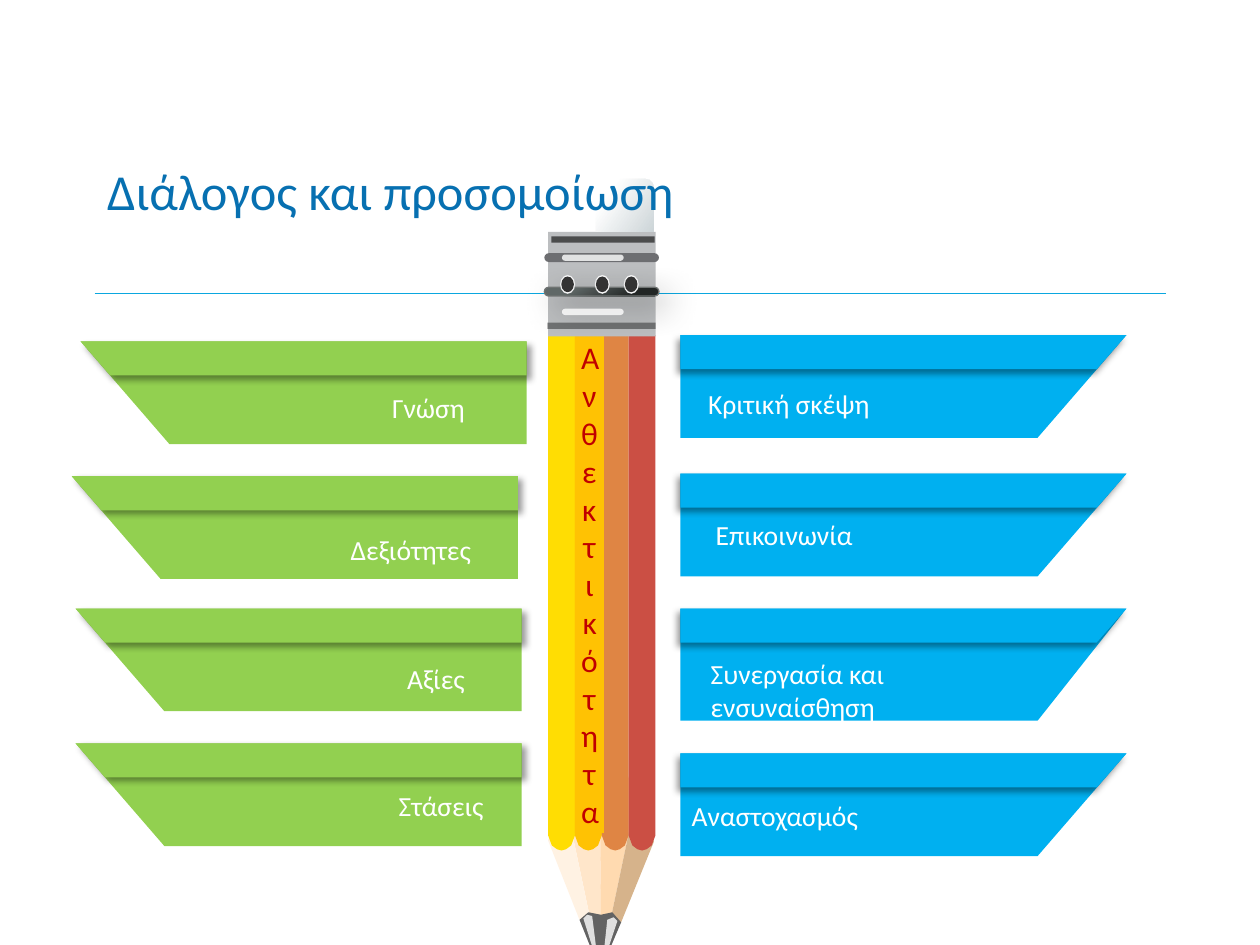
import pptx
import pptx.dml.color
import pptx.enum.shapes
import pptx.enum.text
import pptx.oxml
import pptx.oxml.ns
import pptx.util

SHAPE = pptx.enum.shapes.MSO_SHAPE
ALIGN = pptx.enum.text.PP_ALIGN
ANCHOR = pptx.enum.text.MSO_ANCHOR
QN = pptx.oxml.ns.qn
WIDTH, HEIGHT = pptx.util.Inches(10), pptx.util.Inches(7.5)
COL, ROW = WIDTH / 100, HEIGHT / 75
GREEN, BLUE, WHITE = "92D050", "00B0F0", "FFFFFF"

FACETS = [
    ("FFE6CA", [(4.2, 58.6), (4.1, 47.5), (2, 47.5), (1.3, 49.2), (3.3, 58.7)]),
    ("FFDAB0", [(5, 58.8), (7, 49.3), (6.3, 47.5), (4.1, 47.5), (4.2, 58.6)]),
    ("D6B38B", [(5.8, 59.2), (8.4, 52.8), (7, 49.3), (5, 58.8)]),
    ("FFF2E3", [(1.3, 49.2), (0, 52.7), (2.5, 59), (3.3, 58.7)]),
    ("636363", [(2.5, 59), (3.9, 62.5), (4.2, 62.6), (4.4, 62.5),
                (5.8, 59.2), (5.1, 58.4), (4.2, 58.6), (3.2, 58.4)]),
]
GLINTS = [
    [(5.5, 59.1), (4.3, 62.7), (4.7, 59), (5.2, 58.8)],
    [(2.8, 58.9), (4, 62.7), (3.5, 58.7), (3.1, 58.6)],
]
STRIP_END = [(0, 52.3), (0.14, 53.1), (0.33, 53.4), (0.5, 53.5),
             (0.67, 53.4), (0.86, 53.1), (1, 52.3)]


def rgb(value):
    """Return the colour for a hex string."""
    return pptx.dml.color.RGBColor.from_string(value)


def emu(x, y, w, h):
    """Turn a box in grid cells into slide lengths."""
    return round(x * COL), round(y * ROW), round(w * COL), round(h * ROW)


def paint(sp, color, opacity=100):
    """Give a shape a flat fill with no line and no shadow."""
    sp.shadow.inherit = False
    sp.line.fill.background()
    sp.fill.solid()
    sp.fill.fore_color.rgb = rgb(color)
    if opacity < 100:
        clr = next(sp._element.spPr.iter(QN("a:srgbClr")))
        alpha = pptx.oxml.parse_xml(
            f'<a:alpha {pptx.oxml.ns.nsdecls("a")} val="{opacity * 1000}"/>')
        clr.append(alpha)
    return sp


def shade(sp, colors, positions, angle):
    """Fill a shape with a two-colour gradient."""
    sp.fill.gradient()
    sp.fill.gradient_angle = 360 - angle
    for stop, color, position in zip(sp.fill.gradient_stops, colors, positions):
        stop.color.rgb = rgb(color)
        stop.position = position


def cast_shadow(sp, blur, distance, angle):
    """Add a soft black outer shadow."""
    pt = pptx.util.Pt
    shadow = pptx.oxml.parse_xml(
        f'<a:outerShdw {pptx.oxml.ns.nsdecls("a")} blurRad="{pt(blur)}" dist="{pt(distance)}" '
        f'dir="{angle * 60000}" algn="ctr" rotWithShape="0">'
        '<a:srgbClr val="000000"><a:alpha val="40000"/></a:srgbClr></a:outerShdw>')
    sp._element.spPr.find(QN("a:effectLst")).append(shadow)


def polygon(slide, points, color, opacity=100):
    """Draw a closed outline through points in grid cells."""
    pts = [(round(x * COL), round(y * ROW)) for x, y in points]
    builder = slide.shapes.build_freeform(*pts[0])
    builder.add_line_segments(pts[1:], close=True)
    return paint(builder.convert_to_shape(), color, opacity)


def preset(slide, kind, box, color, opacity=100):
    """Draw a preset shape in a box of grid cells."""
    return paint(slide.shapes.add_shape(kind, *emu(*box)), color, opacity)


def centred(slide, kind, cx, cy, w, h, color, opacity=100):
    """Draw a preset shape around a centre point."""
    return preset(slide, kind, (cx - w / 2, cy - h / 2, w, h), color, opacity)


def write(sp, text, size, color, align, insets):
    """Put one formatted paragraph in a shape."""
    tf = sp.text_frame
    tf.word_wrap = True
    tf.margin_left, tf.margin_top, tf.margin_right, tf.margin_bottom = (
        pptx.util.Inches(i) for i in insets)
    p = tf.paragraphs[0]
    p.text = text
    p.alignment = align
    p.font.name = "Calibri"
    p.font.size = pptx.util.Pt(size)
    p.font.color.rgb = rgb(color)
    return tf


def title(slide, box, text):
    """Place the title in front of everything else."""
    sp = slide.shapes.title
    sp.left, sp.top, sp.width, sp.height = emu(*box)
    tf = write(sp, text, 28.8, "0770B1", ALIGN.LEFT, (0.1, 0, 0.1, 0.42))
    tf.vertical_anchor = ANCHOR.MIDDLE
    slide.shapes._spTree.append(sp._element)


def rule(slide, box):
    """Draw the thin line under the title."""
    x, y, w, h = emu(*box)
    cn = slide.shapes.add_connector(
        pptx.enum.shapes.MSO_CONNECTOR.STRAIGHT, x, y, x + w, y + h)
    cn.line.color.rgb = rgb("0BA7DF")
    cn.line.width = pptx.util.Pt(0.75)
    cn._element.spPr.append(
        pptx.oxml.parse_xml(f'<a:effectLst {pptx.oxml.ns.nsdecls("a")}/>'))


def ribbon(slide, box, color, slant_left):
    """Draw a slanted panel with a shadowed strip along its top."""
    x, y, w, h = box
    inner, outer, angle = (x + w, x, 45) if slant_left else (x, x + w, 129)
    side = 1 if slant_left else -1
    for depth, slant in ((h, 7.05), (2.7, 2.35)):
        sp = polygon(slide, [(inner, y), (outer, y), (outer + side * slant, y + depth),
                             (inner, y + depth)], color)
    cast_shadow(sp, 4, 3, angle)


def label(slide, box, text, align, right=0.04):
    """Write a white caption on a ribbon."""
    sp = slide.shapes.add_textbox(*emu(*box))
    write(sp, text, 15.8, WHITE, align, (0.04, 0.04, right, 0.04))


def barrel(slide, x, y):
    """Draw the wooden tip, the coloured strips and the upright word."""
    for color, points in FACETS:
        polygon(slide, [(x + dx, y + dy) for dx, dy in points], color)
    for points in GLINTS:
        polygon(slide, [(x + dx, y + dy) for dx, dy in points], WHITE, 80)
    strip = 2.13
    for i, color in enumerate(("FFDD03", "FFC203", "DF8544", "CB4F44")):
        outline = [(0, 12.6), *STRIP_END, (1, 12.6)]
        polygon(slide, [(x + (i + dx) * strip, y + dy) for dx, dy in outline], color)
    sp = preset(slide, SHAPE.RECTANGLE, (x + strip, y + 12.6, 2.3, 39.5), "FFC203")
    tf = write(sp, "Ανθεκτικότητα", 18, "C00000", ALIGN.CENTER, (0.05,) * 4)
    tf.vertical_anchor = ANCHOR.MIDDLE


def ferrule(slide, x, y):
    """Draw the metal sleeve with its rings and rivets, and the eraser."""
    mid = x + 4.25
    preset(slide, SHAPE.RECTANGLE, (x, y + 4.4, 8.55, 8.3), "BCBEC0")
    centred(slide, SHAPE.ROUNDED_RECTANGLE, mid, y + 6.45, 9.1, 0.7,
            "6D6E71").adjustments[0] = 0.5
    centred(slide, SHAPE.RECTANGLE, mid + 0.1, y + 5, 8.2, 0.5, "000000", 60)
    centred(slide, SHAPE.RECTANGLE, mid, y + 11.85, 8.6, 0.5, "000000", 40)
    ring = centred(slide, SHAPE.ROUNDED_RECTANGLE, mid, y + 9.15, 9.1, 0.7, "606867")
    ring.adjustments[0] = 0.5
    shade(ring, ("606867", "222625"), (0.24, 0.79), 59)
    ring.line.color.rgb = rgb("707473")
    ring.line.width = pptx.util.Pt(0.75)
    cast_shadow(ring, 19, 8, 45)
    for dy in (6.45, 10.75):
        centred(slide, SHAPE.ROUNDED_RECTANGLE, mid - 0.7, y + dy, 4.9, 0.5,
                WHITE, 80).adjustments[0] = 0.5
    for dx in (1.55, 4.3, 6.6):
        for w, h, color, opacity in ((1.2, 1.5, "E6E7E8", 100), (1.1, 1.4, WHITE, 100),
                                     (1, 1.25, "000000", 80)):
            centred(slide, SHAPE.OVAL, x + dx, y + 8.57, w, h, color, opacity)
    eraser = preset(slide, SHAPE.ROUND_2_SAME_RECTANGLE, (x + 3.8, y + 0.2, 4.6, 4.2), WHITE)
    shade(eraser, (WHITE, "CDD5D8"), (0.23, 1), 35)


def main():
    """Build the slide and save it."""
    prs = pptx.Presentation()
    prs.slide_width, prs.slide_height = WIDTH, HEIGHT
    slide = prs.slides.add_slide(prs.slide_layouts[5])
    rule(slide, (7.5, 23.3, 85, 0))
    for x, y in ((6.4, 27.1), (5.7, 37.8), (6, 48.3), (6, 59)):
        ribbon(slide, (x, y, 35.4, 8.15), GREEN, True)
    for y, h in ((26.6, 8.15), (37.6, 8.15), (48.3, 8.9), (59.8, 8.15)):
        ribbon(slide, (54, y, 35.4, h), BLUE, False)
    for text, y, right in (("Γνώση", 30.6, 0.29), ("Δεξιότητες", 41.9, 0.24),
                           ("Αξίες", 52.1, 0.29), ("Στάσεις", 62.2, 0.14)):
        label(slide, (14.8, y, 25, 3.4), text, ALIGN.RIGHT, right)
    for text, *box in (("Κριτική σκέψη", 55.8, 30.3, 15, 3.4),
                       ("Επικοινωνία", 56.4, 40.7, 28.4, 3.4),
                       ("Συνεργασία και ενσυναίσθηση", 56, 51.7, 26.5, 6.1),
                       ("Αναστοχασμός", 54.5, 63, 15, 3.4)):
        label(slide, box, text, ALIGN.LEFT)
    barrel(slide, 43.5, 14)
    ferrule(slide, 43.5, 14)
    title(slide, (7.5, 14, 85, 6.4), "Διάλογος και προσομοίωση")
    prs.save("out.pptx")


if __name__ == "__main__":
    main()
